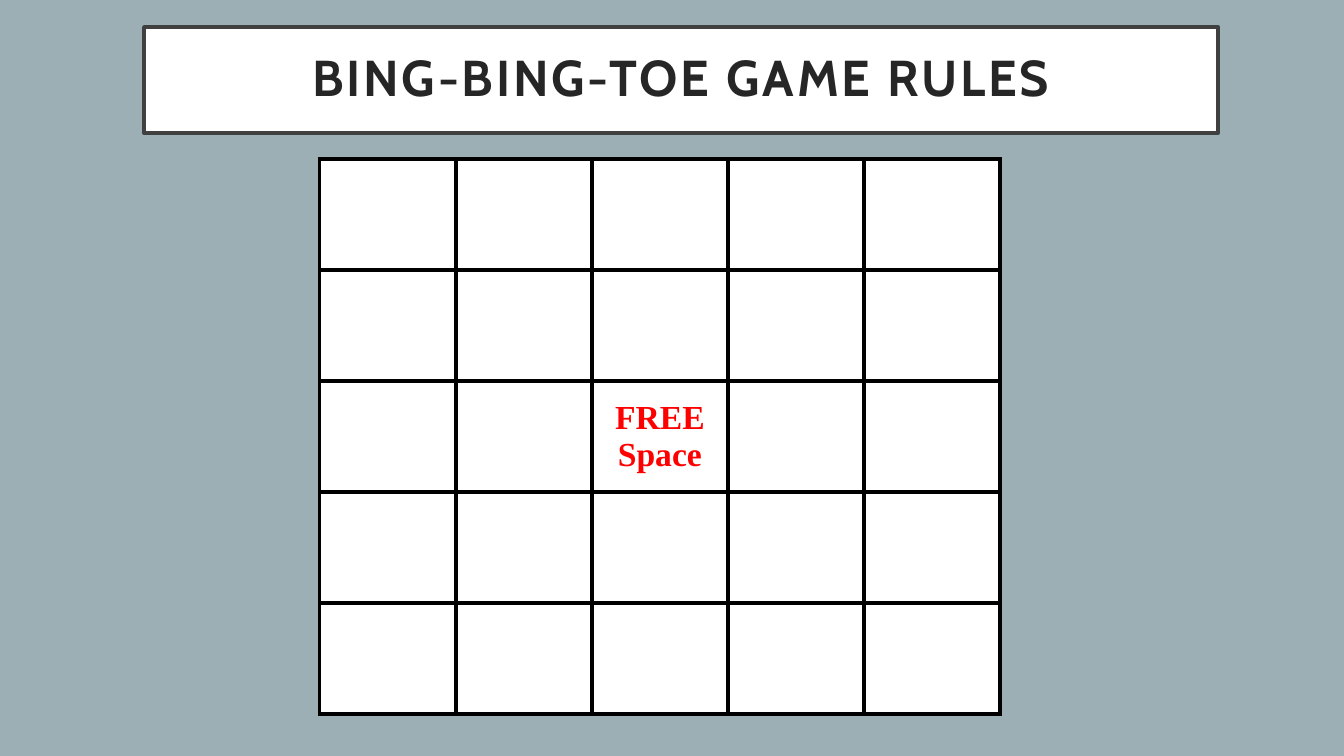
from lxml import etree
from pptx import Presentation
from pptx.dml.color import RGBColor
from pptx.enum import text
from pptx.oxml.ns import qn
from pptx.util import Inches, Pt

# Content
TITLE = "BING-BING-TOE GAME RULES"
FREE_SPACE = ["FREE", "Space"]
GRID = 5
CELL_W, CELL_H = 1.35, 1.1
BOARD_LEFT, BOARD_TOP = 3.17, 1.58
COLORS = {"background": "9BAFB5", "white": "FFFFFF", "frame": "404040",
          "title": "262626", "border": "000000", "free": "FF0000"}


def color(name):
    return RGBColor.from_string(COLORS[name])


def fill(target, name):
    target.fill.solid()
    target.fill.fore_color.rgb = color(name)


def style_run(r, font, size, name):
    r.font.name, r.font.size, r.font.bold = font, Pt(size), True
    r.font.color.rgb = color(name)


def add_borders(cell, width):
    tc_pr = cell._tc.get_or_add_tcPr()
    for i, side in enumerate(("a:lnL", "a:lnR", "a:lnT", "a:lnB")):
        ln = etree.Element(qn(side), w=str(Pt(width)))
        solid = etree.SubElement(ln, qn("a:solidFill"))
        etree.SubElement(solid, qn("a:srgbClr"), val=COLORS["border"])
        tc_pr.insert(i, ln)


prs = Presentation()
prs.slide_width, prs.slide_height = Inches(13.33), Inches(7.5)
s = prs.slides.add_slide(prs.slide_layouts[5])
fill(s.background, "background")

# Game board
board = s.shapes.add_table(GRID, GRID, Inches(BOARD_LEFT), Inches(BOARD_TOP),
                           Inches(GRID * CELL_W), Inches(GRID * CELL_H)).table
board.first_row = board.horz_banding = False
for col in board.columns:
    col.width = Inches(CELL_W)
for row in board.rows:
    row.height = Inches(CELL_H)
for cell in board.iter_cells():
    fill(cell, "white")
    add_borders(cell, 3)

# Free space in the centre
center = board.cell(GRID // 2, GRID // 2)
center.vertical_anchor = text.MSO_ANCHOR.MIDDLE
center.margin_left = center.margin_right = Inches(0.07)
center.margin_top = center.margin_bottom = 0
center.text_frame.text = "\n".join(FREE_SPACE)
for p in center.text_frame.paragraphs:
    p.alignment = text.PP_ALIGN.CENTER
    style_run(p.runs[0], "Times New Roman", 24, "free")

# Framed title
title = s.shapes.title
title.left, title.top = Inches(1.43), Inches(0.27)
title.width, title.height = Inches(10.65), Inches(1.05)
fill(title, "white")
title.line.color.rgb = color("frame")
title.line.width = Pt(3)
tf = title.text_frame
tf.text = TITLE
tf.word_wrap = True
tf.auto_size = text.MSO_AUTO_SIZE.NONE
tf.vertical_anchor = text.MSO_ANCHOR.MIDDLE
tf.margin_left = tf.margin_right = Inches(0.3)
tf.margin_top = tf.margin_bottom = Inches(0.2)
p = tf.paragraphs[0]
p.alignment = text.PP_ALIGN.CENTER
p.line_spacing = 0.9
r = p.runs[0]
style_run(r, "Cabin", 36, "title")
r.font._element.set("spc", "200")  # letter spacing of 2 pt

prs.save("out.pptx")
